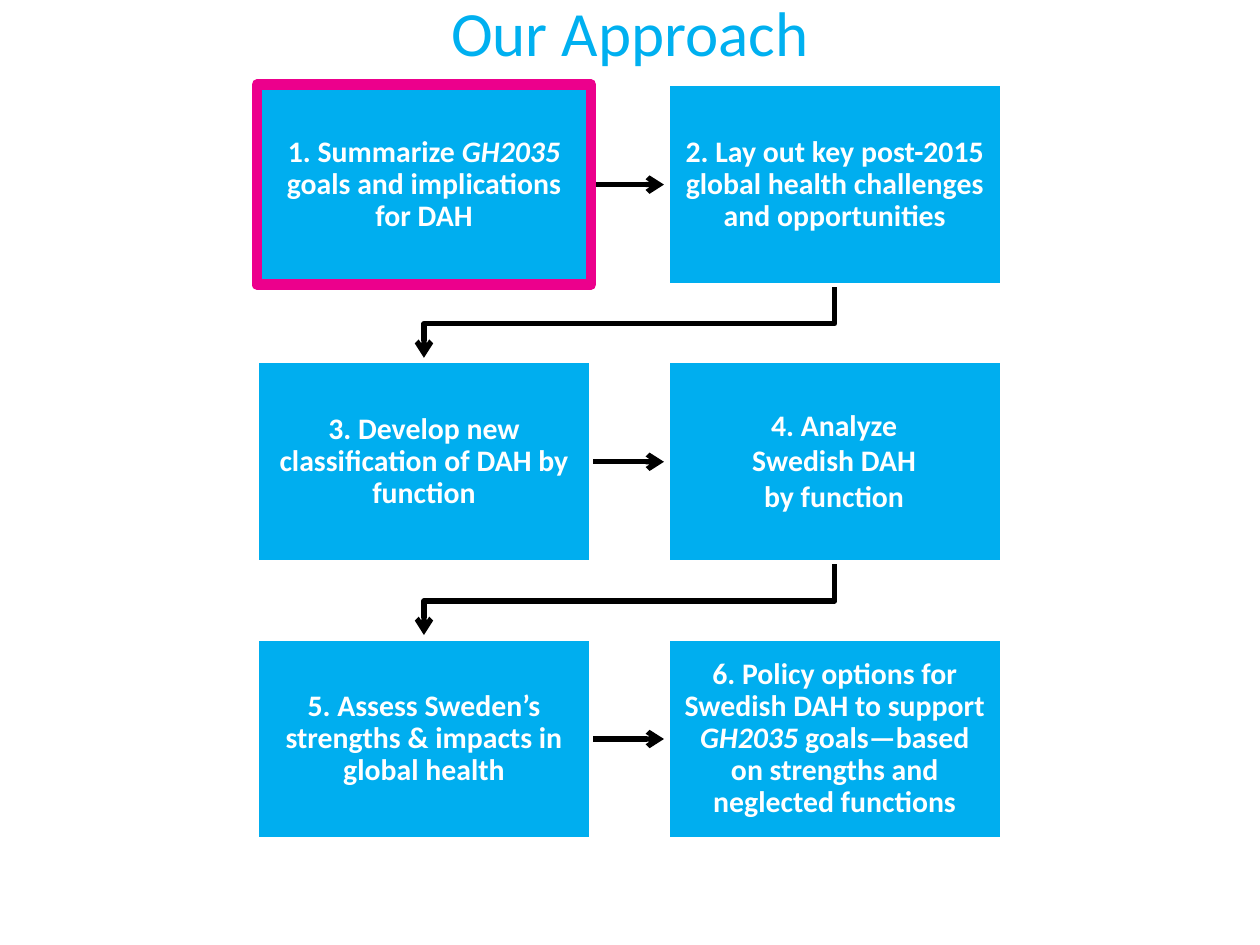
from lxml import etree
from pptx import Presentation
from pptx.dml.color import RGBColor
from pptx.enum import shapes, text
from pptx.oxml.ns import qn
from pptx.util import Pt

COLORS = {"title": "00B0F0", "box": "00AEEF", "highlight": "EC008C",
          "white": "FFFFFF", "arrow": "000000"}
LEFT, TOP = 146.88, 48.24
WIDTH, HEIGHT = 190.8, 114.48
COLUMN_STEP, ROW_STEP = 234.72, 158.4
ARROW_LENGTH = 41.76

# Each step is a list of (text, italic) runs.
STEPS = [
    [("1. Summarize ", False), ("GH2035 ", True),
     ("goals and implications for DAH", False)],
    [("2. Lay out key post-2015 global health challenges and opportunities", False)],
    [("3. Develop new classification of DAH by function", False)],
    [],  # step 4 has its own narrower text box
    [("5. Assess Sweden’s strengths & impacts in global health", False)],
    [("6. Policy options for Swedish DAH to support ", False), ("GH2035", True),
     (" goals—based on strengths and neglected functions", False)],
]


def write(shape, runs, size=17, color="white", bold=True, spacing=1.0, margin=7.2):
    frame = shape.text_frame
    frame.word_wrap = True
    frame.vertical_anchor = text.MSO_ANCHOR.MIDDLE
    frame.margin_left = frame.margin_right = Pt(margin)
    frame.margin_top = frame.margin_bottom = Pt(min(margin, 9.36))
    paragraph = frame.paragraphs[0]
    paragraph.alignment = text.PP_ALIGN.CENTER
    paragraph.line_spacing = spacing
    for content, italic in runs:
        run = paragraph.add_run()
        run.text = content
        run.font.name = "Calibri"
        run.font.size = Pt(size)
        run.font.bold = bold
        run.font.italic = italic
        run.font.color.rgb = RGBColor.from_string(COLORS[color])


def style_arrow(arrow):
    arrow.line.color.rgb = RGBColor.from_string(COLORS["arrow"])
    arrow.line.width = Pt(3)
    line = arrow.line._get_or_add_ln()
    etree.SubElement(line, qn("a:tailEnd"), type="arrow")
    properties = arrow._element.spPr
    if properties.find(qn("a:effectLst")) is None:
        etree.SubElement(properties, qn("a:effectLst"))


presentation = Presentation()
presentation.slide_width, presentation.slide_height = Pt(720), Pt(540)
slide = presentation.slides.add_slide(presentation.slide_layouts[6])

title = slide.shapes.add_textbox(Pt(54), Pt(5.76), Pt(612), Pt(24.48))
write(title, [("Our Approach", False)], size=36, color="title", bold=False)

# Arrows go behind the boxes
for row in range(3):
    top = TOP + row * ROW_STEP
    middle, bottom = top + HEIGHT / 2, top + HEIGHT
    start = LEFT + WIDTH
    across = slide.shapes.add_connector(
        shapes.MSO_CONNECTOR.STRAIGHT,
        Pt(start), Pt(middle), Pt(start + ARROW_LENGTH), Pt(middle))
    style_arrow(across)
    if row < 2:
        left_center = LEFT + WIDTH / 2
        right_center = left_center + COLUMN_STEP
        bend, end = bottom + 22.32, bottom + ARROW_LENGTH
        builder = slide.shapes.build_freeform(Pt(right_center), Pt(bottom))
        builder.add_line_segments(
            [(Pt(right_center), Pt(bend)), (Pt(left_center), Pt(bend)),
             (Pt(left_center), Pt(end))], close=False)
        down = builder.convert_to_shape()
        down.fill.background()
        down.shadow.inherit = False
        style_arrow(down)

for index, runs in enumerate(STEPS):
    row, column = divmod(index, 2)
    box = slide.shapes.add_shape(
        shapes.MSO_SHAPE.RECTANGLE,
        Pt(LEFT + column * COLUMN_STEP), Pt(TOP + row * ROW_STEP),
        Pt(WIDTH), Pt(HEIGHT))
    box.shadow.inherit = False
    box.fill.solid()
    box.fill.fore_color.rgb = RGBColor.from_string(COLORS["box"])
    border = "highlight" if index == 0 else "white"
    box.line.color.rgb = RGBColor.from_string(COLORS[border])
    box.line.width = Pt(6 if index == 0 else 2)
    write(box, runs, spacing=0.9, margin=9.36)

analyze = slide.shapes.add_textbox(Pt(419.76), Pt(228.24), Pt(113.76), Pt(69.12))
write(analyze, [("4. Analyze Swedish DAH by function", False)])

presentation.save("out.pptx")
